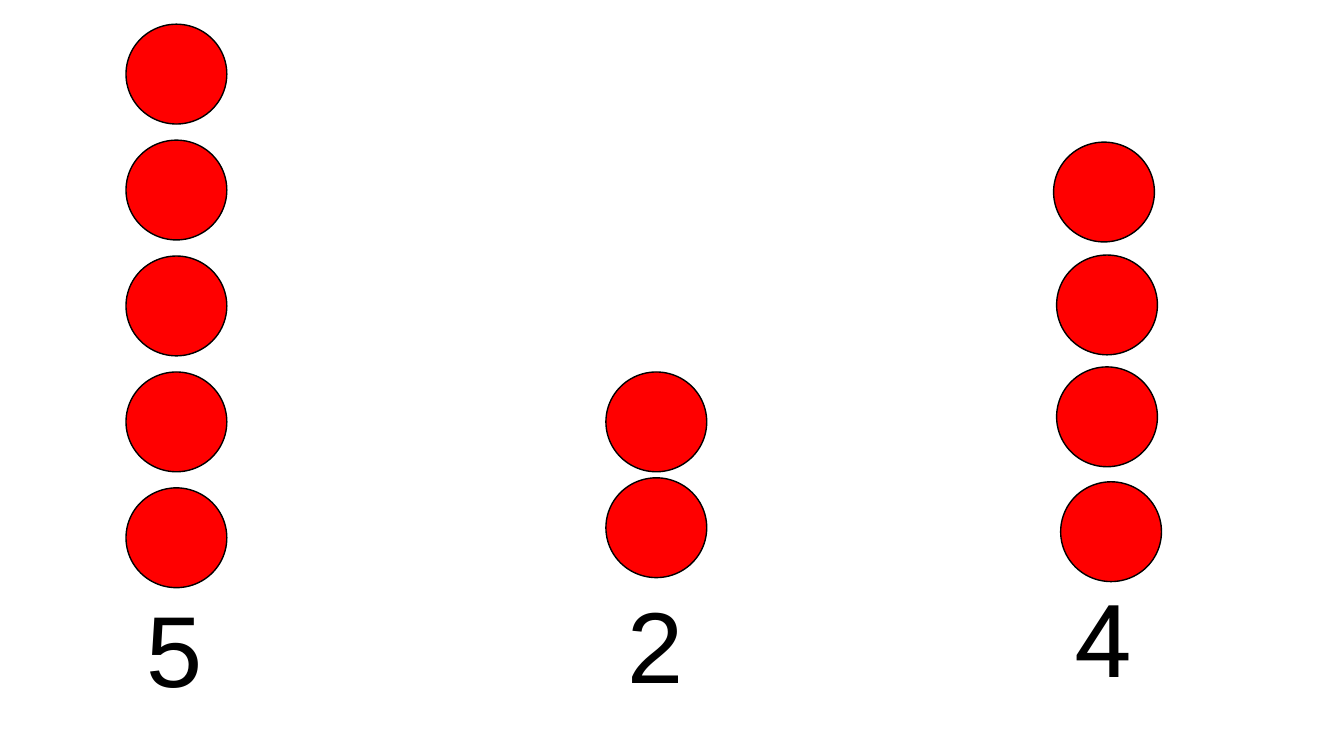
import dataclasses

import pptx
import pptx.dml.color
import pptx.enum.shapes
import pptx.enum.text
import pptx.util

PX = 9144


@dataclasses.dataclass(frozen=True)
class Theme:
    counter: str = "FF0000"
    ink: str = "000000"
    outline: int = 1
    digit: int = 72


@dataclasses.dataclass(frozen=True)
class Box:
    left: int
    top: int
    width: int
    height: int

    def emu(self):
        return [pptx.util.Emu(v * PX) for v in dataclasses.astuple(self)]


THEME = Theme()
COUNTER_W, COUNTER_H = 100, 99
DIGIT_H = 131


def color(value):
    return pptx.dml.color.RGBColor.from_string(value)


def add_counter(s, box):
    sp = s.shapes.add_shape(pptx.enum.shapes.MSO_SHAPE.OVAL, *box.emu())
    sp.shadow.inherit = False
    sp.fill.solid()
    sp.fill.fore_color.rgb = color(THEME.counter)
    sp.line.color.rgb = color(THEME.ink)
    sp.line.width = pptx.util.Pt(THEME.outline)


def add_digit(s, box, text, font):
    sp = s.shapes.add_textbox(*box.emu())
    tf = sp.text_frame
    tf.word_wrap = False
    tf.auto_size = pptx.enum.text.MSO_AUTO_SIZE.SHAPE_TO_FIT_TEXT
    p = tf.paragraphs[0]
    r = p.add_run()
    r.text = text
    r.font.size = pptx.util.Pt(THEME.digit)
    r.font.name = font
    r.font.color.rgb = color(THEME.ink)


def add_column(s, box, offsets, digit_left, digit_width, font):
    for dx, dy in offsets:
        add_counter(s, Box(box.left + dx, box.top + dy, COUNTER_W, COUNTER_H))
    digit_box = Box(box.left + digit_left, box.top + box.height - DIGIT_H,
                    digit_width, DIGIT_H)
    add_digit(s, digit_box, str(len(offsets)), font)


def counting_slide(prs):
    s = prs.slides.add_slide(prs.slide_layouts[6])
    add_column(s, Box(125, 24, 100, 684), [(0, 115 * i) for i in range(5)],
               11, 76, "Arial")
    add_column(s, Box(601, 369, 100, 335), [(0, 105 * i) for i in range(2)],
               12, 76, "Arial")
    add_column(s, Box(1045, 141, 107, 557),
               [(0, 0), (3, 112), (3, 223), (7, 337)], 11, 78, "Roboto")


def main():
    prs = pptx.Presentation()
    prs.slide_width = pptx.util.Emu(1333 * PX)
    prs.slide_height = pptx.util.Emu(750 * PX)
    counting_slide(prs)
    prs.save("out.pptx")


if __name__ == "__main__":
    main()
